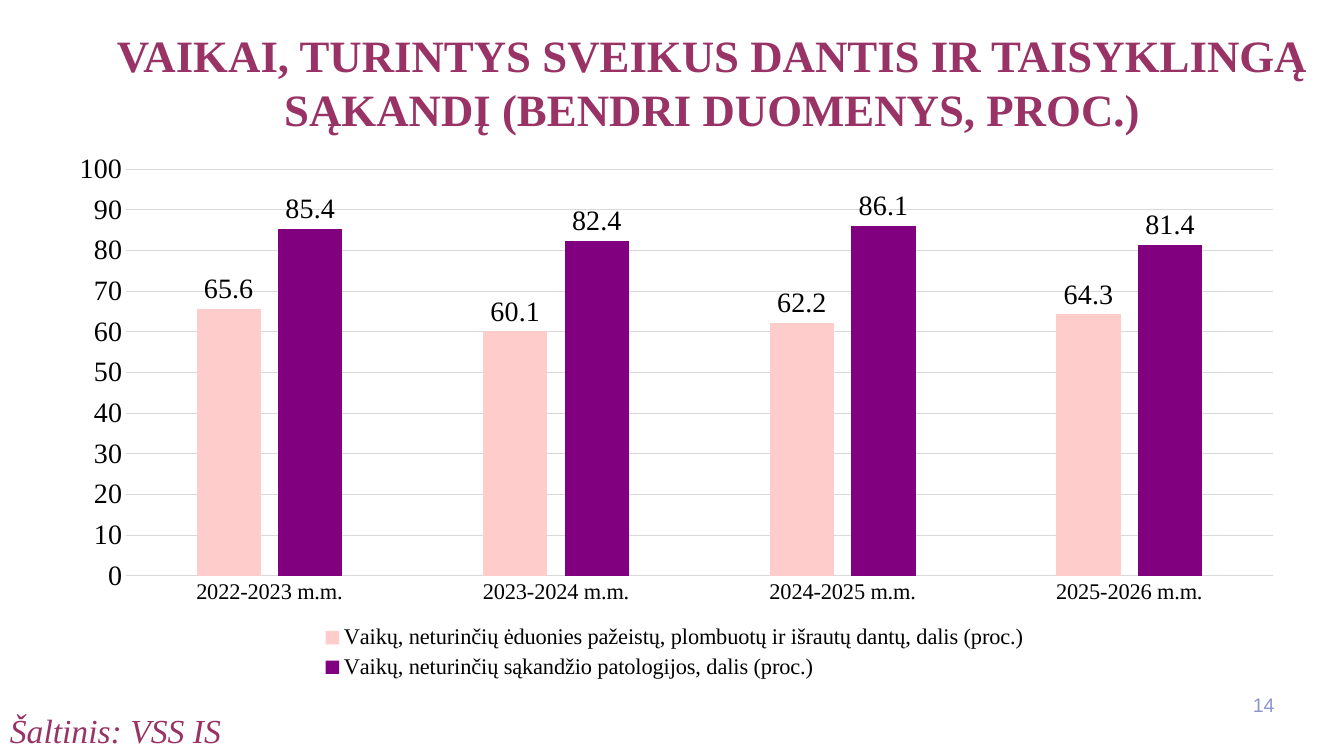
"""Build the slide on children with healthy teeth and a correct bite."""
from dataclasses import dataclass

from lxml import etree
from pptx import Presentation
from pptx.chart.data import CategoryChartData
from pptx.dml.color import RGBColor
from pptx.enum.chart import XL_CHART_TYPE, XL_LABEL_POSITION, XL_LEGEND_POSITION, XL_TICK_MARK
from pptx.enum.text import MSO_ANCHOR, PP_ALIGN
from pptx.oxml.ns import qn
from pptx.util import Inches, Pt

COLUMNS = XL_CHART_TYPE.COLUMN_CLUSTERED
OUTSIDE = XL_LABEL_POSITION.OUTSIDE_END
BOTTOM = XL_LEGEND_POSITION.BOTTOM
NO_TICK = XL_TICK_MARK.NONE
TOP, MIDDLE = MSO_ANCHOR.TOP, MSO_ANCHOR.MIDDLE
LEFT, CENTER, RIGHT = PP_ALIGN.LEFT, PP_ALIGN.CENTER, PP_ALIGN.RIGHT

BLACK = RGBColor(0x00, 0x00, 0x00)
GRID = RGBColor(0xD9, 0xD9, 0xD9)
PINK = RGBColor(0xFF, 0xCC, 0xCC)
PURPLE = RGBColor(0x80, 0x00, 0x80)
BERRY = RGBColor(0x99, 0x33, 0x66)
LAVENDER = RGBColor(0x8E, 0x96, 0xCD)
SERIF = "Times New Roman"


@dataclass(frozen=True)
class Label:
    text: str
    at: tuple[float, float, float, float]
    size: int
    color: RGBColor
    align: PP_ALIGN = LEFT
    anchor: MSO_ANCHOR = TOP
    font: str = SERIF
    bold: bool = False
    italic: bool = False


@dataclass(frozen=True)
class Series:
    name: str
    values: tuple[float, ...]
    color: RGBColor


LABELS = (
    Label("VAIKAI, TURINTYS SVEIKUS DANTIS IR TAISYKLINGĄ SĄKANDĮ "
          "(BENDRI DUOMENYS, PROC.)",
          (0.63, 0.23, 12.87, 1.18), 32, BERRY, CENTER, bold=True),
    Label("Šaltinis: VSS IS", (0, 6.99, 6.67, 0.5), 24, BERRY, italic=True),
    Label("14", (12.22, 6.79, 0.52, 0.4), 14, LAVENDER, RIGHT, MIDDLE, "Arial"),
)
YEARS = tuple(f"{y}-{y + 1} m.m." for y in range(2022, 2026))
SERIES = (
    Series("Vaikų, neturinčių ėduonies pažeistų, plombuotų ir išrautų dantų, dalis (proc.)",
           (65.6, 60.1, 62.2, 64.3), PINK),
    Series("Vaikų, neturinčių sąkandžio patologijos, dalis (proc.)",
           (85.4, 82.4, 86.1, 81.4), PURPLE),
)
CHART_AT = (0.51, 1.41, 12.36, 5.38)
PLOT_LAYOUT = {"layoutTarget": "inner", "xMode": "edge", "yMode": "edge",
               "x": "0.06", "y": "0.05", "w": "0.92", "h": "0.75"}


def add_label(slide, label: Label) -> None:
    s = slide.shapes.add_textbox(*map(Inches, label.at))
    tf = s.text_frame
    tf.word_wrap = True
    tf.vertical_anchor = label.anchor
    p = tf.paragraphs[0]
    p.alignment = label.align
    r = p.add_run()
    r.text = label.text
    style_font(r.font, label.size, label.color, label.font)
    r.font.bold = label.bold
    r.font.italic = label.italic


def style_font(font, size: int, color: RGBColor = BLACK, name: str = SERIF) -> None:
    font.size = Pt(size)
    font.name = name
    font.color.rgb = color


def style_line(line) -> None:
    line.color.rgb = GRID
    line.width = Pt(0.75)


def place_plot(chart) -> None:
    area = chart.plots[0]._element.getparent()
    for old in area.findall(qn("c:layout")):
        area.remove(old)
    layout = etree.Element(qn("c:layout"))
    manual = etree.SubElement(layout, qn("c:manualLayout"))
    for tag, val in PLOT_LAYOUT.items():
        etree.SubElement(manual, qn(f"c:{tag}")).set("val", val)
    area.insert(0, layout)


def add_column_chart(slide) -> None:
    data = CategoryChartData(number_format="0.0")
    data.categories = YEARS
    for series in SERIES:
        data.add_series(series.name, series.values)
    chart = slide.shapes.add_chart(COLUMNS, *map(Inches, CHART_AT), data).chart
    style_font(chart.font, 10, name="Calibri")
    chart.has_title = False
    chart.has_legend = True
    chart.legend.position = BOTTOM
    chart.legend.include_in_layout = False
    style_font(chart.legend.font, 16)

    plot = chart.plots[0]
    plot.gap_width = 219
    plot.overlap = -27
    plot.vary_by_categories = False
    for bars, series in zip(plot.series, SERIES):
        bars.format.fill.solid()
        bars.format.fill.fore_color.rgb = series.color
        bars.invert_if_negative = False
        labels = bars.data_labels
        labels.show_value = True
        labels.position = OUTSIDE
        style_font(labels.font, 20)

    years, percent = chart.category_axis, chart.value_axis
    for axis, size in ((years, 16), (percent, 20)):
        axis.major_tick_mark = axis.minor_tick_mark = NO_TICK
        style_font(axis.tick_labels.font, size)
    style_line(years.format.line)
    percent.minimum_scale, percent.maximum_scale, percent.major_unit = 0, 100, 10
    percent.tick_labels.number_format = "0"
    percent.tick_labels.number_format_is_linked = False
    percent.format.line.fill.background()
    style_line(percent.major_gridlines.format.line)
    place_plot(chart)


def main() -> None:
    prs = Presentation()
    prs.slide_width, prs.slide_height = Inches(13.33), Inches(7.5)
    slide = prs.slides.add_slide(prs.slide_layouts[6])
    add_column_chart(slide)
    for label in LABELS:
        add_label(slide, label)
    prs.save("out.pptx")


if __name__ == "__main__":
    main()
